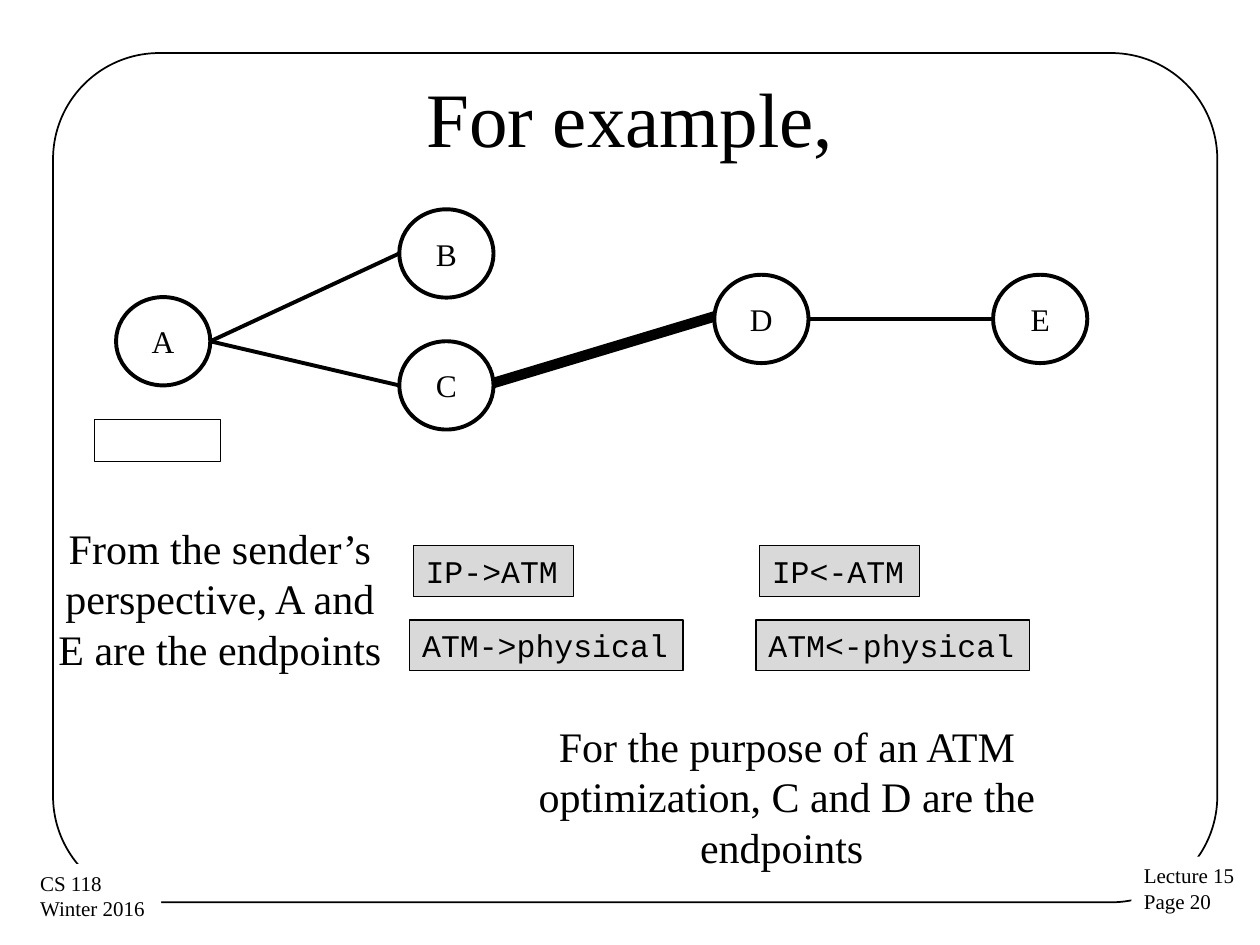
"""Build the slide on network endpoints as seen by the sender and by ATM."""
from typing import NamedTuple

import pptx
import pptx.dml.color
import pptx.enum.shapes
import pptx.enum.text
import pptx.util
from lxml import etree
from pptx.util import Cm, Pt

BLACK = pptx.dml.color.RGBColor(0x00, 0x00, 0x00)
WHITE = pptx.dml.color.RGBColor(0xFF, 0xFF, 0xFF)
GRAY = pptx.dml.color.RGBColor(0xD9, 0xD9, 0xD9)
SERIF, MONO = "Times New Roman", "Courier New"
SHAPE = pptx.enum.shapes.MSO_SHAPE
ALIGN = pptx.enum.text.PP_ALIGN
ANCHOR = pptx.enum.text.MSO_ANCHOR
NODE_WIDTH, NODE_HEIGHT = 1.9, 1.78
DRAWING_NS = "http://schemas.openxmlformats.org/drawingml/2006/main"


class Box(NamedTuple):
    left: float
    top: float
    width: float
    height: float


class Node(NamedTuple):
    left: float
    top: float


class Link(NamedTuple):
    start: str
    end: str
    weight: float = 2.25
    lift: float = 0


class Note(NamedTuple):
    text: str
    box: Box


NODES = {
    "A": Node(2.34, 5.99),
    "B": Node(8.05, 4.22),
    "C": Node(8.05, 6.88),
    "D": Node(14.4, 5.54),
    "E": Node(20.02, 5.54),
}
LINKS = [Link("A", "B"), Link("A", "C"), Link("C", "D"), Link("D", "E"),
         Link("C", "D", weight=6, lift=0.05)]
FOOTERS = [
    Note("Lecture 15\nPage 20", Box(22.81, 17.27, 2.36, 1.3)),
    Note("CS 118\nWinter 2016", Box(0.56, 17.42, 2.69, 1.3)),
]
CONVERSIONS = [
    Note(f"IP{arrow}ATM", Box(8.33 + shift, 11, 3.23, 1.02))
    for arrow, shift in (("->", 0), ("<-", 6.98))
] + [
    Note(f"ATM{arrow}physical", Box(8.26 + shift, 12.5, 5.51, 1.02))
    for arrow, shift in (("->", 0), ("<-", 6.98))
]
CAPTIONS = [
    Note("For the purpose of an ATM optimization, C and D are the endpoints ",
         Box(9.73, 14.4, 12.27, 3.33)),
    Note("From the sender’s perspective, A and E are the endpoints",
         Box(0.84, 10.41, 7.19, 3.33)),
]


def write(shape, text: str, *, size: float, font: str = SERIF,
          align=ALIGN.CENTER, anchor=ANCHOR.TOP, wrap: bool = True) -> None:
    frame = shape.text_frame
    frame.text = text
    frame.word_wrap = wrap
    frame.vertical_anchor = anchor
    for paragraph in frame.paragraphs:
        paragraph.alignment = align
        paragraph.font.size = Pt(size)
        paragraph.font.name = font
        paragraph.font.color.rgb = BLACK


def add_outline(slide, kind, box: Box, fill=None, weight: float = 0):
    shape = slide.shapes.add_shape(kind, *map(Cm, box))
    shape.shadow.inherit = False
    if fill is None:
        shape.fill.background()
    else:
        shape.fill.solid()
        shape.fill.fore_color.rgb = fill
    if weight:
        shape.line.color.rgb = BLACK
        shape.line.width = Pt(weight)
    else:
        shape.line.fill.background()
    return shape


def add_link(slide, link: Link) -> None:
    start, end = NODES[link.start], NODES[link.end]
    middle = NODE_HEIGHT / 2 - link.lift
    line = slide.shapes.add_connector(
        pptx.enum.shapes.MSO_CONNECTOR.STRAIGHT,
        Cm(start.left + NODE_WIDTH), Cm(start.top + middle),
        Cm(end.left), Cm(end.top + middle))
    line.line.color.rgb = BLACK
    line.line.width = Pt(link.weight)
    etree.SubElement(line._element.spPr, f"{{{DRAWING_NS}}}effectLst")


def main() -> None:
    deck = pptx.Presentation()
    deck.slide_width, deck.slide_height = Cm(25.4), Cm(19.05)
    slide = deck.slides.add_slide(deck.slide_layouts[5])

    title = slide.shapes.title
    title.left, title.top, title.width, title.height = map(
        Cm, Box(1.27, 0.76, 22.86, 3.18))
    write(title, "For example,", size=44, anchor=ANCHOR.MIDDLE)

    border = add_outline(slide, SHAPE.ROUNDED_RECTANGLE,
                         Box(1.07, 1.07, 23.47, 17.12), weight=1)
    border.adjustments[0] = 0.125
    for footer in FOOTERS:
        write(add_outline(slide, SHAPE.RECTANGLE, footer.box, WHITE),
              footer.text, size=12, align=ALIGN.LEFT, wrap=False)

    for name, node in NODES.items():
        circle = add_outline(slide, SHAPE.OVAL,
                             Box(*node, NODE_WIDTH, NODE_HEIGHT), WHITE, 2.25)
        write(circle, name, size=18, anchor=ANCHOR.MIDDLE)
    for link in LINKS:
        add_link(slide, link)

    add_outline(slide, SHAPE.RECTANGLE, Box(1.9, 8.46, 2.54, 0.84), WHITE, 0.75)
    for conversion in CONVERSIONS:
        write(add_outline(slide, SHAPE.RECTANGLE, conversion.box, GRAY, 0.75),
              conversion.text, size=18, font=MONO, align=ALIGN.LEFT, wrap=False)
    for caption in CAPTIONS:
        write(slide.shapes.add_textbox(*map(Cm, caption.box)),
              caption.text, size=24)

    deck.save("out.pptx")


if __name__ == "__main__":
    main()
